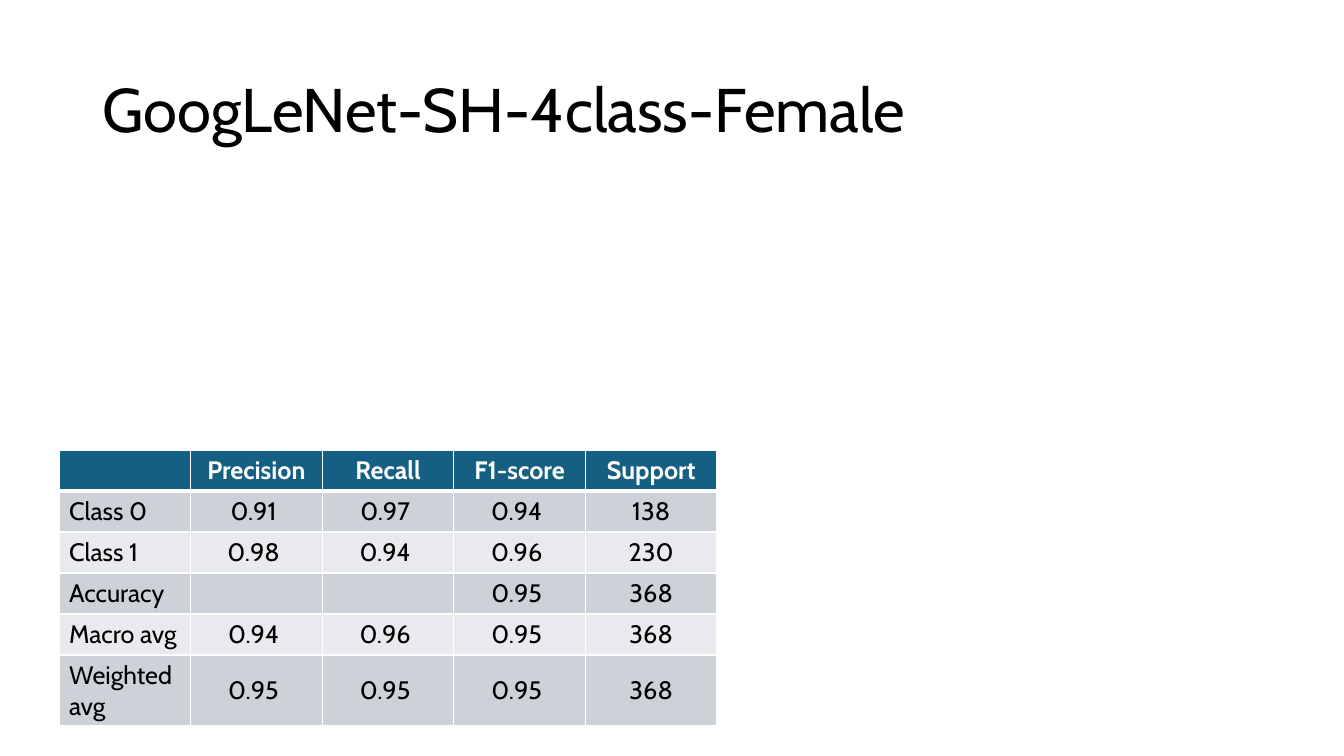
from lxml import etree
from pptx import Presentation
from pptx import util as u
from pptx.dml.color import RGBColor
from pptx.enum import text
from pptx.oxml.ns import qn

EMU = 914400 / 100.8
HEAD = ["", "Precision", "Recall", "F1-score", "Support"]
ROWS = [
    ["Class 0", "0.91 ", "0.97 ", "0.94 ", "138"],
    ["Class 1", "0.98 ", "0.94 ", "0.96 ", "230"],
    ["Accuracy", "", "", "0.95 ", "368"],
    ["Macro avg", "0.94 ", "0.96 ", "0.95 ", "368"],
    ["Weighted avg", "0.95 ", "0.95 ", "0.95 ", "368"],
]


def px(n):
    return u.Emu(round(n * EMU))


def color(code):
    return RGBColor.from_string(code)


class Deck:
    font = "Cabin"
    ink, paper = "000000", "FFFFFF"
    teal, bands = "156082", ("CCD2D8", "E8EAED")

    def __init__(self):
        self.prs = Presentation()
        self.prs.slide_width, self.prs.slide_height = px(1344), px(756)
        self.slide = self.prs.slides.add_slide(self.prs.slide_layouts[6])

    def run(self, para, words, size, code, bold=False):
        run = para.add_run()
        run.text = words
        run.font.name, run.font.size = self.font, u.Pt(size)
        run.font.bold = bold
        run.font.color.rgb = color(code)

    def title(self, words, x, y, w, h):
        frame = self.slide.shapes.add_textbox(px(x), px(y), px(w), px(h)).text_frame
        frame.word_wrap = True
        frame.vertical_anchor = text.MSO_ANCHOR.MIDDLE
        para = frame.paragraphs[0]
        para.line_spacing = 0.9
        self.run(para, words, 44, self.ink)

    def border(self, cell, **widths):
        """Rule the cell's sides, given as L, R, T, B widths in points."""
        props = cell._tc.get_or_add_tcPr()
        for side, width in widths.items():
            line = etree.SubElement(props, qn(f"a:ln{side}"), w=str(u.Pt(width)))
            fill = etree.SubElement(line, qn("a:solidFill"))
            etree.SubElement(fill, qn("a:srgbClr"), val=self.paper)

    def cell(self, cell, words, row, col):
        top = row == 0
        self.border(cell, L=1, R=1, T=3 if row == 1 else 1, B=3 if top else 1)
        cell.fill.solid()
        cell.fill.fore_color.rgb = color(self.teal if top else self.bands[(row - 1) % 2])
        para = cell.text_frame.paragraphs[0]
        if col:
            cell.vertical_anchor = text.MSO_ANCHOR.MIDDLE
            para.alignment = text.PP_ALIGN.CENTER
        if words:
            self.run(para, words, 18, self.paper if top else self.ink, top)

    def table(self, rows, x, y, w, step):
        """Draw rows of text, the first as header, each step px high."""
        count = len(rows[0])
        grid = self.slide.shapes.add_table(
            len(rows), count, px(x), px(y), px(w), px(step * len(rows))).table
        for col in grid.columns:
            col.width = px(w / count)
        for i, row in enumerate(rows):
            for j, words in enumerate(row):
                self.cell(grid.cell(i, j), words, i, j)


def main():
    deck = Deck()
    deck.title("GoogLeNet-SH-4class-Female", 93, 40, 1159, 146)
    deck.table([HEAD] + ROWS, 59, 450, 658, 41)
    deck.prs.save("out.pptx")


if __name__ == "__main__":
    main()
